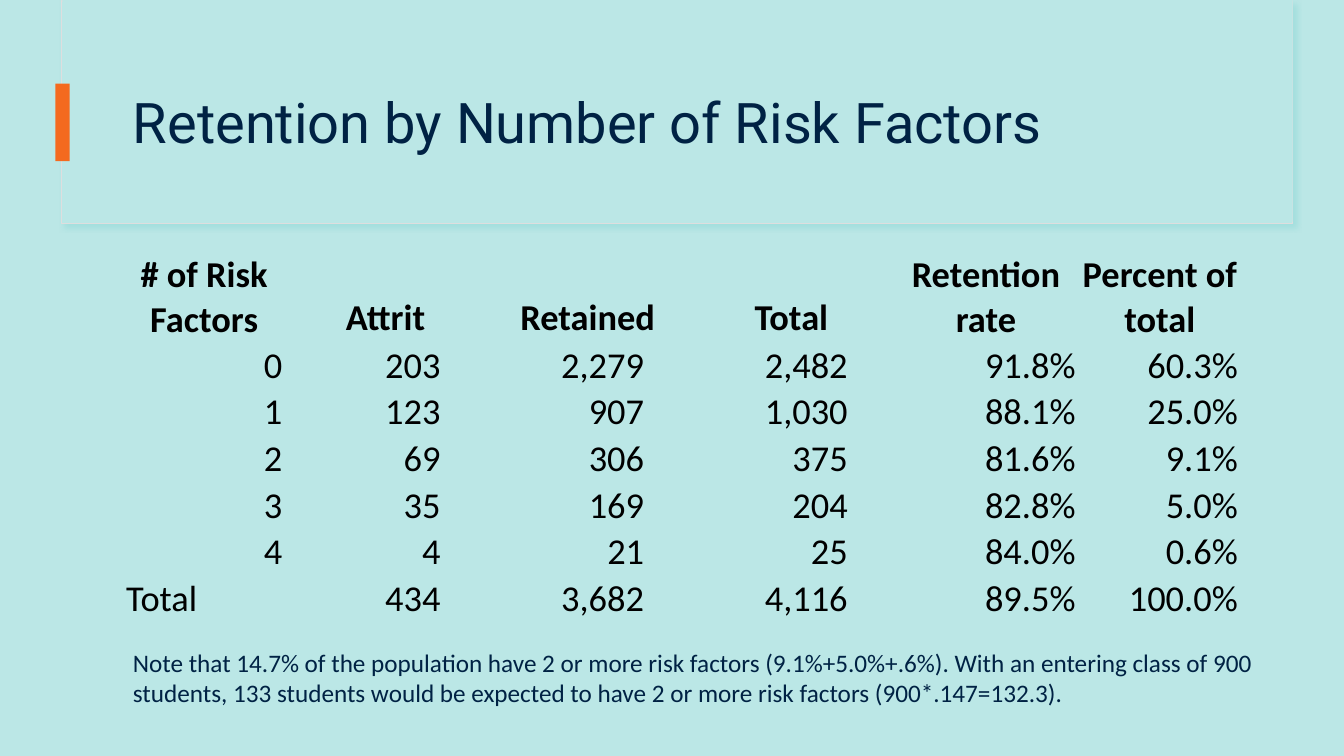
from lxml import etree
from pptx import Presentation
from pptx import util as u
from pptx.dml.color import RGBColor
from pptx.enum import shapes, text
from pptx.oxml.ns import qn

PX = 9144
COLORS = {"background": "BBE7E6", "edge": "DEDEDE", "shadow": "8DD7D5",
          "navy": "002244", "orange": "F46A1F", "black": "000000"}
NO_GRID_STYLE = "{2D5ABB26-0587-4C30-8999-92F81FD0307C}"
LEFT, CENTER, RIGHT = text.PP_ALIGN.LEFT, text.PP_ALIGN.CENTER, text.PP_ALIGN.RIGHT

TITLE = "Retention by Number of Risk Factors"
NOTE = ("Note that 14.7% of the population have 2 or more risk factors (9.1%+5.0%+.6%). "
        "With an entering class of 900 students, 133 students would be expected to have "
        "2 or more risk factors (900*.147=132.3).")
HEADERS = ["# of Risk Factors", "Attrit", "Retained", "Total", "Retention rate", "Percent of total"]
ROWS = [
    ["0", "203", "2,279", "2,482", "91.8%", "60.3%"],
    ["1", "123", "907", "1,030", "88.1%", "25.0%"],
    ["2", "69", "306", "375", "81.6%", "9.1%"],
    ["3", "35", "169", "204", "82.8%", "5.0%"],
    ["4", "4", "21", "25", "84.0%", "0.6%"],
    ["Total", "434", "3,682", "4,116", "89.5%", "100.0%"],
]
COLUMN_WIDTHS = [161, 199, 202, 202, 184, 161]
HEADER_HEIGHT, ROW_HEIGHT = 76, 43
CELL_MARGIN, COUNT_MARGIN = 3, 45
COUNT_COLUMNS = (1, 2, 3)


def px(*lengths):
    return [u.Emu(length * PX) for length in lengths]


def color(name):
    return RGBColor.from_string(COLORS[name])


def apply_format(target, values):
    for name, value in values.items():
        setattr(target, name, value)


def write_text(frame, words, size, font, ink, bold=False, **paragraph_format):
    paragraph = frame.paragraphs[0]
    apply_format(paragraph, paragraph_format)
    run = paragraph.add_run()
    run.text = words
    apply_format(run.font, {"size": u.Pt(size), "name": font, "bold": bold})
    run.font.color.rgb = color(ink)


def add_text(slide, box, anchor, *content, **paragraph_format):
    frame = slide.shapes.add_textbox(*px(*box)).text_frame
    apply_format(frame, {"word_wrap": True, "vertical_anchor": anchor})
    write_text(frame, *content, **paragraph_format)


def add_panel(slide, box, fill):
    shape = slide.shapes.add_shape(shapes.MSO_SHAPE.RECTANGLE, *px(*box))
    shape.shadow.inherit = False
    shape.fill.solid()
    shape.fill.fore_color.rgb = color(fill)
    shape.line.fill.background()
    return shape


def add_shadow(shape):
    effects = shape._element.spPr.find(qn("a:effectLst"))
    shadow = etree.SubElement(effects, qn("a:outerShdw"), blurRad=str(u.Pt(4)),
                              dist=str(u.Pt(3)), dir=str(45 * 60000), algn="tl", rotWithShape="0")
    tint = etree.SubElement(shadow, qn("a:srgbClr"), val=COLORS["shadow"])
    etree.SubElement(tint, qn("a:alpha"), val="50000")


def add_title_band(slide, box):
    left, top, width, height = box
    frame = add_panel(slide, (left - 1, top + 1, width + 1, height + 1), "background")
    frame.line.color.rgb = color("edge")
    frame.line.width = u.Pt(0.75)
    add_shadow(frame)
    add_panel(slide, box, "background")
    add_text(slide, (left + 60, top + 60, 1112, 129), text.MSO_ANCHOR.MIDDLE,
             TITLE, 40, "Roboto", "navy", line_spacing=0.9)
    add_panel(slide, (left - 7, top + 83, 14, 77), "orange")


def cell_alignment(row, column):
    if row == 0:
        return CENTER
    return LEFT if row == len(ROWS) and column == 0 else RIGHT


def add_retention_table(slide, left, top):
    height = HEADER_HEIGHT + ROW_HEIGHT * len(ROWS)
    box = px(left, top, sum(COLUMN_WIDTHS), height)
    table_frame = slide.shapes.add_table(len(ROWS) + 1, len(HEADERS), *box)
    table = table_frame.table
    apply_format(table, {"first_row": False, "horz_banding": False})
    next(table_frame._element.iter(qn("a:tableStyleId"))).text = NO_GRID_STYLE
    for column, width in zip(table.columns, px(*COLUMN_WIDTHS)):
        column.width = width
    for index, row in enumerate(table.rows):
        row.height = u.Emu((ROW_HEIGHT if index else HEADER_HEIGHT) * PX)
    for row, values in enumerate([HEADERS] + ROWS):
        for column, value in enumerate(values):
            cell = table.cell(row, column)
            is_count = row > 0 and column in COUNT_COLUMNS
            side, right = px(CELL_MARGIN, COUNT_MARGIN if is_count else CELL_MARGIN)
            apply_format(cell, {"margin_left": side, "margin_top": side, "margin_right": right,
                                "margin_bottom": 0, "vertical_anchor": text.MSO_ANCHOR.BOTTOM})
            cell.fill.background()
            write_text(cell.text_frame, value, 26, "Calibri", "black", bold=row == 0,
                       alignment=cell_alignment(row, column))


def add_note(slide, box):
    add_text(slide, box, text.MSO_ANCHOR.TOP, NOTE, 18, "Calibri", "navy")


def main():
    presentation = Presentation()
    presentation.slide_width, presentation.slide_height = px(1333, 750)
    slide = presentation.slides.add_slide(presentation.slide_layouts[6])
    slide.background.fill.solid()
    slide.background.fill.fore_color.rgb = color("background")
    add_title_band(slide, (62, 0, 1220, 220))
    add_retention_table(slide, 122, 248)
    add_note(slide, (122, 637, 1136, 71))
    presentation.save("out.pptx")


if __name__ == "__main__":
    main()
